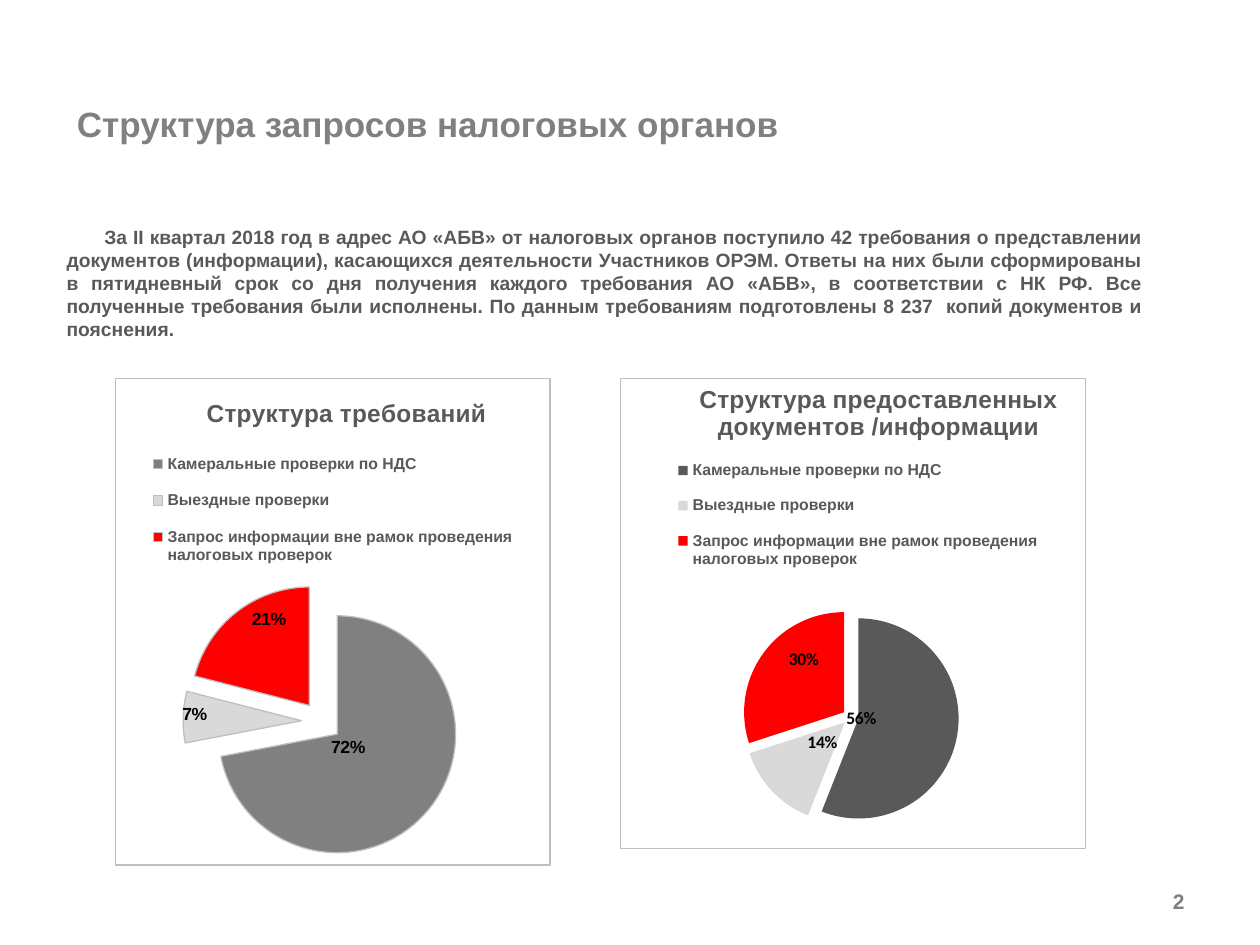
from lxml.etree import SubElement
from pptx import Presentation
from pptx.chart.data import CategoryChartData as Data
from pptx.dml.color import RGBColor as Color
from pptx.enum.chart import XL_CHART_TYPE as Kind, XL_LABEL_POSITION as Spot
from pptx.enum.chart import XL_LEGEND_POSITION as Side
from pptx.enum.text import MSO_ANCHOR as Anchor, PP_ALIGN as Align
from pptx.oxml import parse_xml
from pptx.oxml.ns import nsdecls, qn
from pptx.util import Inches, Pt

WIDE, HIGH = Inches(10), Inches(7.5)
COL, ROW = WIDE / 100, HIGH / 75
GREY = Color(0x80, 0x80, 0x80)
DARK = Color(0x59, 0x59, 0x59)
PALE = Color(0xD9, 0xD9, 0xD9)
EDGE = Color(0xBF, 0xBF, 0xBF)
PAGE = Color(0x7F, 0x7F, 0x7F)
RED = Color(0xFF, 0, 0)
BLACK = Color(0, 0, 0)
CATS = ("Камеральные проверки по НДС", "Выездные проверки",
        "Запрос информации вне рамок проведения налоговых проверок")
BODY = ("За II квартал 2018 год в адрес АО «АБВ» от налоговых органов поступило "
        "42 требования о представлении документов (информации), касающихся "
        "деятельности Участников ОРЭМ. Ответы на них были сформированы в "
        "пятидневный срок со дня получения каждого требования АО «АБВ», в "
        "соответствии с НК РФ. Все полученные требования были исполнены. По "
        "данным требованиям подготовлены 8 237  копий документов и пояснения.")


def grid(x, y, w, h):
    """Turn columns and rows into slide lengths."""
    return int(x * COL), int(y * ROW), int(w * COL), int(h * ROW)


def style(font, size, color, face="Arial", bold=True):
    """Set the look of a font."""
    font.name, font.size, font.bold = face, Pt(size), bold
    font.color.rgb = color


def write(shape, box, text, size, color, align, anchor):
    """Place a text shape in its box and fill it."""
    shape.left, shape.top, shape.width, shape.height = box
    frame = shape.text_frame
    frame.word_wrap, frame.vertical_anchor = True, anchor
    frame.text = text
    para = frame.paragraphs[0]
    para.alignment = align
    style(para.font, size, color)
    return para


def place(node, index, spot, inner=False):
    """Give a chart part a manual layout in shares of the chart."""
    for old in node.findall(qn("c:layout")):
        node.remove(old)
    layout = parse_xml(f"<c:layout {nsdecls('c')}><c:manualLayout/></c:layout>")
    manual = layout[0]
    if inner:
        SubElement(manual, qn("c:layoutTarget")).set("val", "inner")
    if node.tag != qn("c:dLbl"):
        for name in ("xMode", "yMode"):
            SubElement(manual, qn(f"c:{name}")).set("val", "edge")
    for name, share in zip("xywh", spot):
        SubElement(manual, qn(f"c:{name}")).set("val", str(share))
    node.insert(index, layout)


def frame(chart):
    """Draw a thin border round a chart."""
    root = chart.element
    root.find(qn("c:chart")).addnext(parse_xml(
        f"<c:spPr {nsdecls('c', 'a')}><a:noFill/><a:ln w='9525'><a:solidFill>"
        f"<a:srgbClr val='{EDGE}'/></a:solidFill></a:ln></c:spPr>"))


def explode(series, burst):
    """Pull the slices apart, for the series and for each point."""
    dots = series._element.findall(qn("c:dPt"))
    for mark in [dots[0]] + [dot.find(qn("c:spPr")) for dot in dots]:
        mark.addprevious(parse_xml(f"<c:explosion {nsdecls('c')} val='{burst}'/>"))


def slices(series, tones, burst, shifts, face, line):
    """Colour, pull out and label each slice."""
    for i, tone in enumerate(tones):
        point = series.points[i]
        point.format.fill.solid()
        point.format.fill.fore_color.rgb = tone
        if line:
            point.format.line.color.rgb = EDGE
            point.format.line.width = Pt(0.75)
        else:
            point.format.line.fill.background()
        label = point.data_label
        style(label.font, 10, BLACK, face)
        label.position = Spot.CENTER
    explode(series, burst)
    for node, shift in zip(series._element.iter(qn("c:dLbl")), shifts):
        place(node, 1, shift)
        node.find(qn("c:showVal")).set("val", "0")
        node.find(qn("c:showPercent")).set("val", "1")


def pie(slide, box, title, values, tones, burst, shifts, plot, head, key,
        face="Arial", line=False, over=False):
    """Add a framed pie chart with its title and legend."""
    data = Data()
    data.categories = CATS
    data.add_series("Series 1", values)
    chart = slide.shapes.add_chart(Kind.PIE, *box, data).chart
    style(chart.font, 10, DARK, face)
    frame(chart)
    chart.has_title = True
    words = chart.chart_title.text_frame
    words.text = title
    style(words.paragraphs[0].font, 14, DARK)
    chart.has_legend = True
    legend = chart.legend
    legend.position, legend.include_in_layout = Side.TOP, over
    style(legend.font, 9, DARK)
    root = chart.element
    place(root.find(".//" + qn("c:title")), 1, head)
    place(root.find(".//" + qn("c:legend")), 1, key)
    place(root.find(".//" + qn("c:plotArea")), 0, plot, True)
    chart.plots[0].vary_by_categories = True
    slices(chart.plots[0].series[0], tones, burst, shifts, face, line)


def build():
    """Build and save the slide."""
    deck = Presentation()
    deck.slide_width, deck.slide_height = WIDE, HIGH
    slide = deck.slides.add_slide(deck.slide_layouts[5])
    write(slide.shapes.title, grid(5.1, 7.6, 87.4, 7.4),
          "Структура запросов налоговых органов", 20, GREY, Align.LEFT, Anchor.TOP)
    box = grid(4.3, 16.2, 87.4, 12.5)
    body = write(slide.shapes.add_textbox(*box), box, BODY, 11, DARK,
                 Align.JUSTIFY, Anchor.MIDDLE)
    body._p.get_or_add_pPr().set("indent", str(Inches(0.3)))
    pie(slide, grid(9.1, 30, 34.6, 38.7), "Структура требований",
        (72, 7, 21), (GREY, PALE, RED), 17,
        ((-0.08, -0.05), (-0.11, -0.01), (-0.01, -0.08)),
        (0.02, 0.42, 0.91, 0.57), (0.2, 0.03), (0.06, 0.12, 0.88, 0.3), line=True)
    pie(slide, grid(49.2, 30, 37, 37.4),
        "Структура предоставленных документов /информации",
        (56, 14, 30), (DARK, PALE, RED), 8,
        ((-0.1, -0.02), (0.03, -0.03), (0, -0.05)),
        (0.08, 0.49, 0.83, 0.46), (0.16, 0), (0.09, 0.14, 0.84, 0.3),
        face="Calibri", over=True)
    box = grid(71.7, 69.5, 23.3, 4)
    write(slide.shapes.add_textbox(*box), box, "2", 12, PAGE, Align.RIGHT, Anchor.MIDDLE)
    deck.save("out.pptx")


if __name__ == "__main__":
    build()
